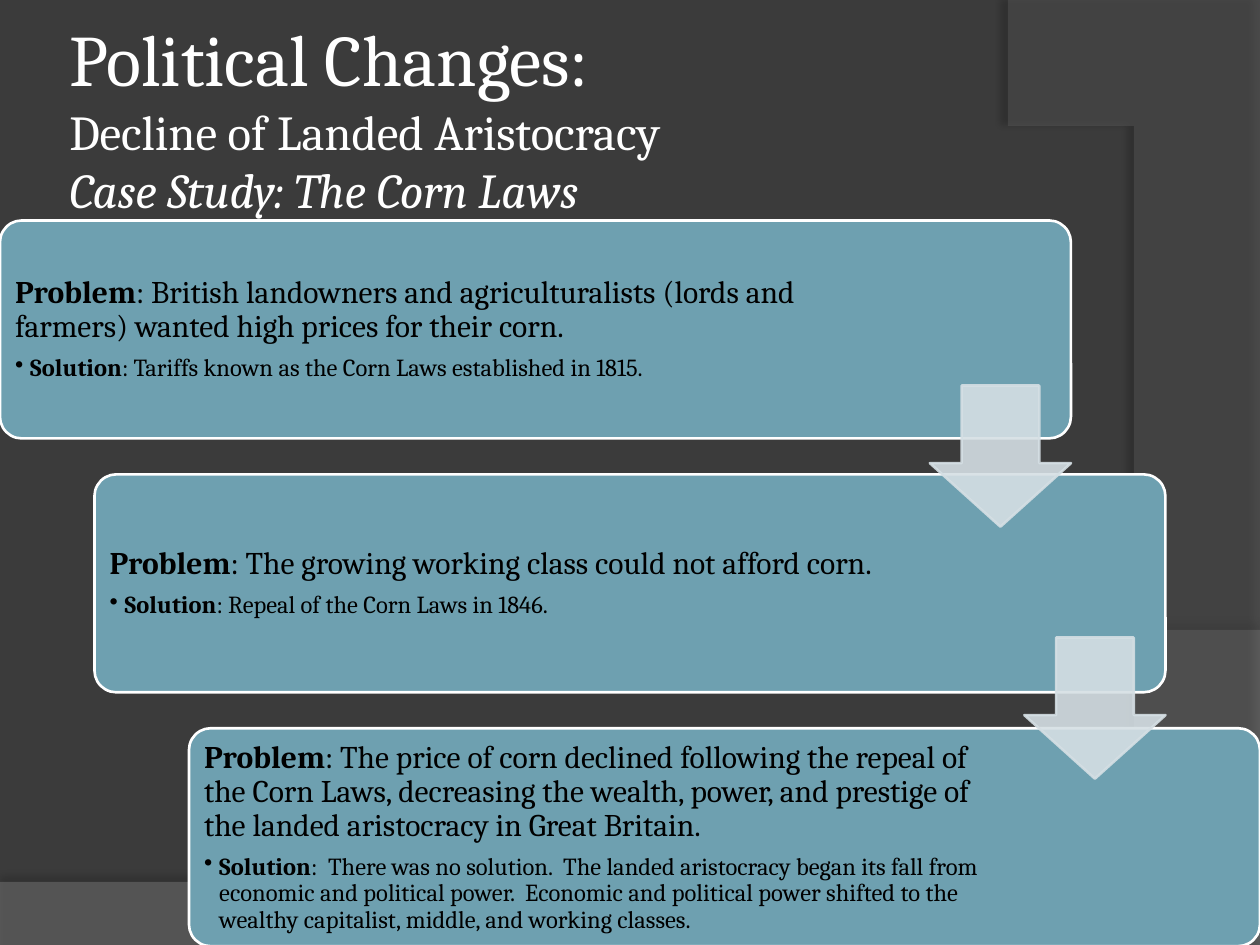
import pptx
import pptx.util
import pptx.oxml
import pptx.oxml.ns
from pptx.dml.color import RGBColor
from pptx.enum.shapes import MSO_SHAPE
from pptx.enum.text import MSO_ANCHOR, PP_ALIGN, MSO_AUTO_SIZE

Inches, Pt = pptx.util.Inches, pptx.util.Pt

FONT = "Cambria"
BLACK = RGBColor(0x00, 0x00, 0x00)
WHITE = RGBColor(0xFF, 0xFF, 0xFF)
CHARCOAL = RGBColor(0x3B, 0x3B, 0x3B)
GRAY = RGBColor(0x7F, 0x7F, 0x7F)
DARK_GRAY = RGBColor(0x5E, 0x5E, 0x5E)
TEAL = RGBColor(0x6E, 0xA0, 0xB0)
PALE = RGBColor(0xD5, 0xDF, 0xE4)

# Content: title lines as (text, size, italic); steps as (problem, solution)
TITLE = [
    ("Political Changes: ", 41.4, False),
    ("Decline of Landed Aristocracy", 27.9, False),
    ("Case Study: The Corn Laws", 27.9, True),
]
STEPS = [
    (": British landowners and agriculturalists (lords and farmers) wanted high prices for their corn.",
     ": Tariffs known as the Corn Laws established in 1815."),
    (": The growing working class could not afford corn.",
     ": Repeal of the Corn Laws in 1846."),
    (": The price of corn declined following the repeal of the Corn Laws, decreasing the wealth, "
     "power, and prestige of the landed aristocracy in Great Britain.",
     ":  There was no solution.  The landed aristocracy began its fall from economic and political "
     "power.  Economic and political power shifted to the wealthy capitalist, middle, and working classes."),
]

# Staircase geometry, in inches
STEP_TOP, STEP_WIDTH, STEP_HEIGHT = 1.75, 8.5, 1.73
SHIFT_X, SHIFT_Y = 0.75, 2.015
TEXT_WIDTHS = [6.64, 6.53, 6.53]
INSET, ARROW, ARROW_TOP = 0.05, 1.12, 3.06

# Background swooshes: line corners, then a Bezier curve back to the start
SWOOSHES = [
    dict(corners=[(0, 7.05), (0, 7.51), (10, 7.51), (10, 5.2)],
         curve=[(5.59, 7.29), (3.91, 7.19), (0, 7.05)],
         color=GRAY, alpha=45, shadow=(35, 4, 3.5, 270)),
    dict(corners=[(8, 0), (10, 0.02), (10, 7.5), (8.21, 7.5)],
         curve=[(9.35, 6.19), (10.18, 3), (8, 0)],
         color=DARK_GRAY, alpha=40, shadow=(45, 4, 4, 180)),
]


def bezier(start, first, second, end, count=40):
    for step in range(1, count + 1):
        t = step / count
        weights = ((1 - t) ** 3, 3 * t * (1 - t) ** 2, 3 * t * t * (1 - t), t ** 3)
        yield tuple(sum(w * point[axis] for w, point in zip(weights, (start, first, second, end)))
                    for axis in (0, 1))


def set_alpha(shape, percent):
    for color in shape._element.spPr.iter(pptx.oxml.ns.qn("a:srgbClr")):
        color.append(pptx.oxml.parse_xml(
            f'<a:alpha {pptx.oxml.ns.nsdecls("a")} val="{percent * 1000}"/>'))


def add_shadow(shape, alpha, blur, distance, angle):
    shape._element.spPr.append(pptx.oxml.parse_xml(
        f'<a:effectLst {pptx.oxml.ns.nsdecls("a")}><a:outerShdw blurRad="{Pt(blur)}" '
        f'dist="{Pt(distance)}" dir="{angle * 60000}" algn="ctr" rotWithShape="0">'
        f'<a:srgbClr val="000000"><a:alpha val="{alpha * 1000}"/></a:srgbClr>'
        '</a:outerShdw></a:effectLst>'))


def add_swoosh(slide, corners, curve, color, alpha, shadow):
    builder = slide.shapes.build_freeform(*corners[0], scale=Inches(1))
    builder.add_line_segments(corners[1:] + list(bezier(corners[-1], *curve)), close=True)
    shape = builder.convert_to_shape()
    shape.fill.solid()
    shape.fill.fore_color.rgb = color
    shape.line.fill.background()
    set_alpha(shape, alpha)
    add_shadow(shape, *shadow)


def add_panel(slide, kind, left, top, width, height, fill, line, adjustments):
    shape = slide.shapes.add_shape(kind, *map(Inches, (left, top, width, height)))
    for index, value in enumerate(adjustments):
        shape.adjustments[index] = value
    shape.shadow.inherit = False
    shape.fill.solid()
    shape.fill.fore_color.rgb = fill
    shape.line.color.rgb = line
    shape.line.width = Pt(1.5)
    return shape


def add_span(para, text, size, color, bold=False, italic=False):
    span = para.add_run()
    span.text = text
    span.font.name, span.font.size = FONT, Pt(size)
    span.font.bold, span.font.italic = bold, italic
    span.font.color.rgb = color


def prepare_frame(frame, inset):
    frame.word_wrap = True
    frame.auto_size = MSO_AUTO_SIZE.NONE
    frame.vertical_anchor = MSO_ANCHOR.MIDDLE
    frame.margin_left = frame.margin_right = Inches(inset)
    frame.margin_top = frame.margin_bottom = Inches(inset)


def add_step_text(slide, left, top, width, height, problem, solution):
    box = slide.shapes.add_textbox(*map(Inches, (left, top, width, height)))
    frame = box.text_frame
    prepare_frame(frame, 0.07)
    rows = [("Problem", problem, 18, 0.35), ("Solution", solution, 14, 0.15)]
    for level, (label, text, size, gap) in enumerate(rows):
        para = frame.add_paragraph() if level else frame.paragraphs[0]
        para.level = level
        para.line_spacing = 0.9
        para.space_after = Pt(size * gap)
        add_span(para, label, size, BLACK, bold=True)
        add_span(para, text, size, BLACK)
    # Bullet on the solution
    properties = para._p.get_or_add_pPr()
    properties.set("marL", str(Inches(0.12)))
    properties.set("indent", str(Inches(-0.12)))
    properties.append(pptx.oxml.parse_xml(
        f'<a:buChar {pptx.oxml.ns.nsdecls("a")} char="•"/>'))


def main():
    deck = pptx.Presentation()
    deck.slide_width, deck.slide_height = Inches(10), Inches(7.5)
    slide = deck.slides.add_slide(deck.slide_layouts[5])
    slide.background.fill.solid()
    slide.background.fill.fore_color.rgb = CHARCOAL

    for swoosh in SWOOSHES:
        add_swoosh(slide, **swoosh)

    # Title, in front of the swooshes
    title = slide.shapes.title
    title.left, title.top, title.width, title.height = map(Inches, (0.5, 0.3, 8.92, 1.25))
    slide.shapes._spTree.append(title._element)
    prepare_frame(title.text_frame, 0.05)
    para = title.text_frame.paragraphs[0]
    para.alignment = PP_ALIGN.LEFT
    for index, (text, size, italic) in enumerate(TITLE):
        if index:
            para.add_line_break()
        add_span(para, text, size, WHITE, italic=italic)

    # Steps of the staircase
    for index, (step, width) in enumerate(zip(STEPS, TEXT_WIDTHS)):
        left, top = index * SHIFT_X, STEP_TOP + index * SHIFT_Y
        add_panel(slide, MSO_SHAPE.ROUNDED_RECTANGLE, left, top, STEP_WIDTH, STEP_HEIGHT,
                  TEAL, WHITE, [0.1])
        add_step_text(slide, left + INSET, top + INSET, width, STEP_HEIGHT - 2 * INSET, *step)

    # Arrows from each step to the next
    for index in range(len(STEPS) - 1):
        arrow = add_panel(slide, MSO_SHAPE.DOWN_ARROW,
                          STEP_WIDTH - ARROW + index * SHIFT_X, ARROW_TOP + index * 2,
                          ARROW, ARROW, PALE, PALE, [0.55, 0.45])
        set_alpha(arrow, 90)

    deck.save("out.pptx")


if __name__ == "__main__":
    main()
